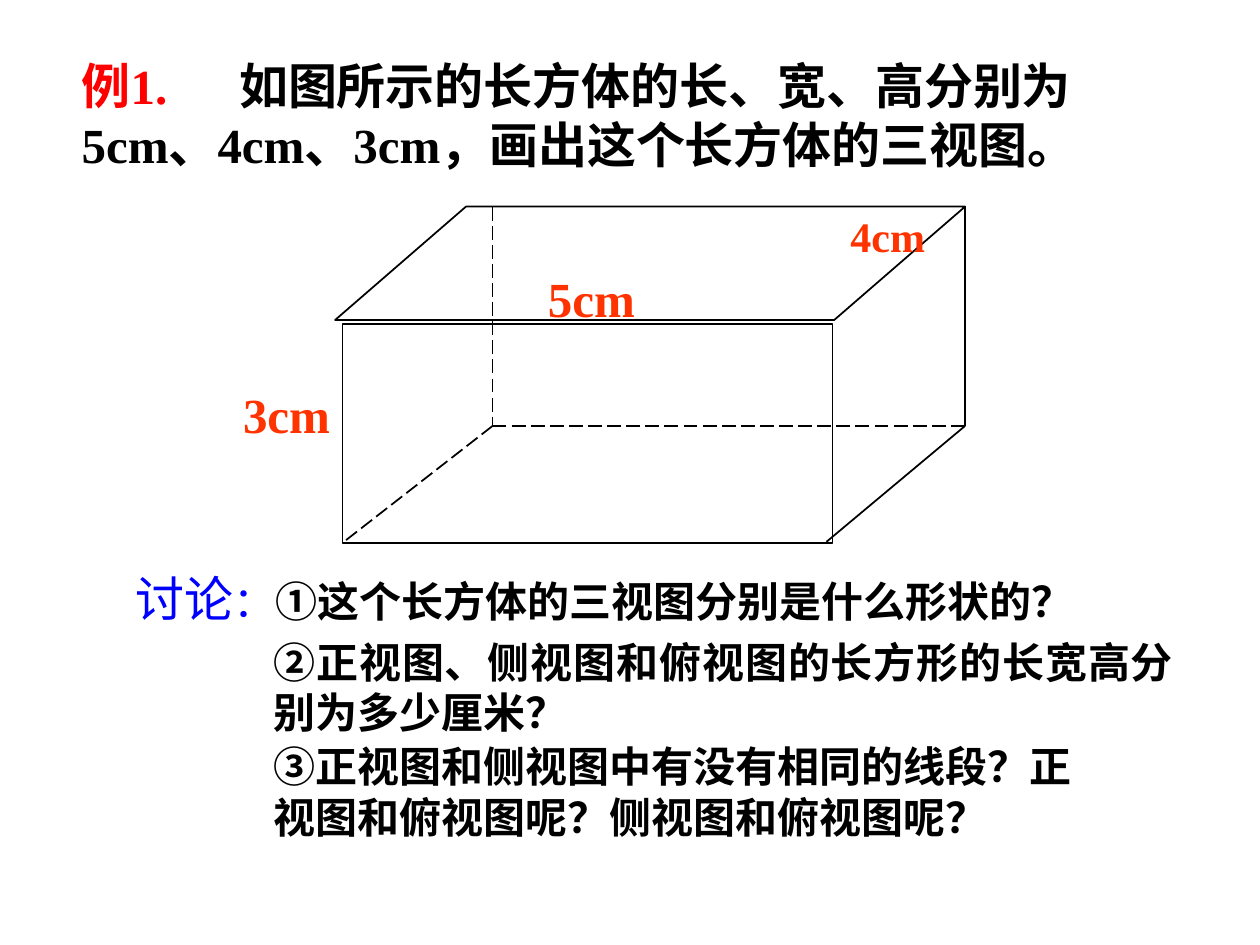
import pptx
import pptx.dml.color
import pptx.enum.dml
import pptx.enum.shapes
import pptx.enum.text
import pptx.util
from lxml import etree

Pt = pptx.util.Pt
ALIGN = pptx.enum.text.PP_ALIGN
SHAPE = pptx.enum.shapes.MSO_SHAPE
FONT = "Times New Roman"
BLACK, RED, BLUE, ORANGE = "000000", "FF0000", "0000FF", "FF3300"


def colour(value):
    """Turn a hex string into a colour."""
    return pptx.dml.color.RGBColor.from_string(value)


def add_text(page, box, spans, align=ALIGN.LEFT, wrap=True):
    """Add one paragraph of (text, size, colour, bold) spans in a box."""
    shape = page.shapes.add_textbox(*map(Pt, box))
    frame = shape.text_frame
    frame.word_wrap = wrap
    frame.auto_size = pptx.enum.text.MSO_AUTO_SIZE.SHAPE_TO_FIT_TEXT
    para = frame.paragraphs[0]
    para.alignment = align
    for text, size, ink, bold in spans:
        span = para.add_run()
        span.text = text
        span.font.name = FONT
        span.font.size = Pt(size)
        span.font.bold = bold
        span.font.color.rgb = colour(ink)
    return para


def add_tab_stop(para, position):
    """Put a left tab stop into a paragraph."""
    properties = para._p.get_or_add_pPr()
    space = properties.nsmap["a"]
    stops = etree.SubElement(properties, f"{{{space}}}tabLst")
    etree.SubElement(stops, f"{{{space}}}tab", pos=str(Pt(position)), algn="l")


def add_problem(page, box):
    """Write the example with its number set off by a tab."""
    para = add_text(page, box, [
        ("例1.\t", 28, RED, True),
        ("如图所示的长方体的长、宽、高分别为5cm、4cm、3cm，画出这个长方体的三视图。", 28, BLACK, True),
    ])
    add_tab_stop(para, 90)


def add_face(group, kind, box):
    """Outline one face of the cuboid."""
    face = group.shapes.add_shape(kind, *map(Pt, box))
    face.shadow.inherit = False
    face.fill.background()
    face.line.color.rgb = colour(BLACK)
    face.line.width = Pt(1)
    return face


def add_edge(group, start, end, hidden):
    """Draw one edge of the cuboid, dashed if hidden."""
    edge = group.shapes.add_connector(
        pptx.enum.shapes.MSO_CONNECTOR.STRAIGHT, *map(Pt, start + end))
    edge.line.color.rgb = colour(BLACK)
    edge.line.width = Pt(1)
    if hidden:
        edge.line.dash_style = pptx.enum.dml.MSO_LINE.LONG_DASH
    properties = edge._element.spPr
    etree.SubElement(properties, f"{{{properties.nsmap['a']}}}effectLst")


def add_cuboid(page, box):
    """Draw the cuboid and label its three dimensions."""
    left, top, width, height = box
    group = page.shapes.add_group_shape()
    add_face(group, SHAPE.RECTANGLE, (left + 4.3, top + 67, 280, height - 67))
    lid = add_face(group, SHAPE.PARALLELOGRAM, (left, top, width, 64.8))
    lid.adjustments[0] = 1.154

    right, back, floor, front = left + width, left + 90, top + 125.3, top + 191.5
    for start, end, hidden in (
        ((right, floor), (left + 280.8, front), False),
        ((right, top), (right, floor), False),
        ((back, floor), (left + 5, front), True),
        ((back, top), (back, floor), True),
        ((back, floor), (right, floor), True),
    ):
        add_edge(group, start, end, hidden)

    add_text(page, (left + 114.5, top + 31.7, 90, 41), [("5cm", 28, ORANGE, True)])
    add_text(page, (left - 59.7, top + 97.9, 72, 41), [("3cm", 28, ORANGE, True)])
    add_text(page, (left + 287.3, top - 1.5, 56.9, 36), [("4cm", 24, ORANGE, True)],
             ALIGN.CENTER, False)


def add_discussion(page, box):
    """Write the three questions, the last two indented under the first."""
    left, top, width, height = box
    indent = left + 78.5
    add_text(page, (left, top, width, 41), [
        ("讨论", 28, BLUE, False),
        ("：", 24, BLUE, False),
        ("①这个长方体的三视图分别是什么形状的？", 24, BLACK, True),
    ], ALIGN.JUSTIFY)
    add_text(page, (indent, top + 38.9, 528.5, 64.8), [
        ("②正视图、侧视图和俯视图的长方形的长宽高分别为多少厘米？", 24, BLACK, True),
    ], ALIGN.JUSTIFY)
    add_text(page, (indent, top + height - 64.8, 473.8, 64.8), [
        ("③正视图和侧视图中有没有相同的线段？正视图和俯视图呢？侧视图和俯视图呢？", 24, BLACK, True),
    ])


def main():
    """Build the slide and save it."""
    deck = pptx.Presentation()
    deck.slide_width, deck.slide_height = Pt(720), Pt(540)
    page = deck.slides.add_slide(deck.slide_layouts[6])
    add_problem(page, (39.6, 28.1, 629.3, 74.2))
    add_discussion(page, (70.6, 321.1, 629.3, 163.5))
    add_cuboid(page, (191.5, 118.1, 360, 192.2))
    deck.save("out.pptx")


if __name__ == "__main__":
    main()
